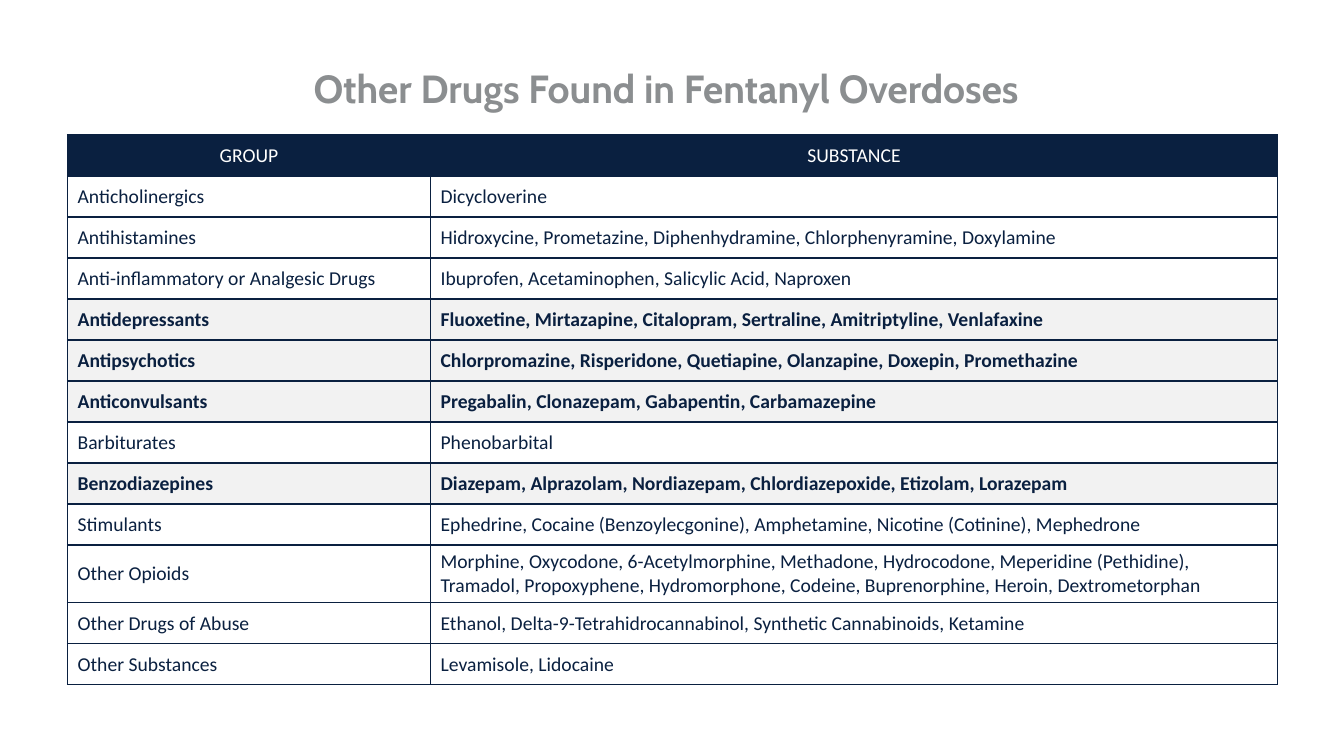
from dataclasses import dataclass

from lxml.etree import SubElement
from pptx import Presentation
from pptx.dml.color import RGBColor
from pptx.enum.text import MSO_ANCHOR as Anchor, PP_ALIGN as Align
from pptx.oxml.ns import qn
from pptx.util import Inches, Pt

# Content
TITLE = "Other Drugs Found in Fentanyl Overdoses"
HEADINGS = ("GROUP", "SUBSTANCE")
DRUGS = [
    ("Anticholinergics", "Dicycloverine"),
    ("Antihistamines", "Hidroxycine, Prometazine, Diphenhydramine, Chlorphenyramine, Doxylamine"),
    ("Anti-inflammatory or Analgesic Drugs", "Ibuprofen, Acetaminophen, Salicylic Acid, Naproxen"),
    ("Antidepressants", "Fluoxetine, Mirtazapine, Citalopram, Sertraline, Amitriptyline, Venlafaxine"),
    ("Antipsychotics", "Chlorpromazine, Risperidone, Quetiapine, Olanzapine, Doxepin, Promethazine"),
    ("Anticonvulsants", "Pregabalin, Clonazepam, Gabapentin, Carbamazepine"),
    ("Barbiturates", "Phenobarbital"),
    ("Benzodiazepines", "Diazepam, Alprazolam, Nordiazepam, Chlordiazepoxide, Etizolam, Lorazepam"),
    ("Stimulants", "Ephedrine, Cocaine (Benzoylecgonine), Amphetamine, Nicotine (Cotinine), Mephedrone"),
    ("Other Opioids", "Morphine, Oxycodone, 6-Acetylmorphine, Methadone, Hydrocodone, "
                      "Meperidine (Pethidine), Tramadol, Propoxyphene, Hydromorphone, Codeine, "
                      "Buprenorphine, Heroin, Dextrometorphan"),
    ("Other Drugs of Abuse", "Ethanol, Delta-9-Tetrahidrocannabinol, Synthetic Cannabinoids, Ketamine"),
    ("Other Substances", "Levamisole, Lidocaine"),
]
HIGHLIGHTED = {"Antidepressants", "Antipsychotics", "Anticonvulsants", "Benzodiazepines"}


@dataclass(frozen=True)
class Theme:
    navy: str = "0A2040"
    gray: str = "8B8E90"
    pale: str = "F2F2F2"
    white: str = "FFFFFF"
    title_font: str = "Cabin"
    body_font: str = "Calibri"
    title_size: int = 28
    body_size: int = 14
    border: int = 1


THEME = Theme()
COLUMN_WIDTHS = (Inches(3.6), Inches(8.4))
TABLE_HEIGHT = Inches(5.29)


def write(frame, text, *, font=THEME.body_font, size=THEME.body_size,
          color=THEME.navy, bold=False, align=Align.LEFT, spacing=1.0):
    para = frame.paragraphs[0]
    para.alignment = align
    para.line_spacing = spacing
    span = para.add_run()
    span.text = text
    span.font.name = font
    span.font.size = Pt(size)
    span.font.bold = bold
    span.font.color.rgb = RGBColor.from_string(color)


def add_borders(cell):
    properties = cell._tc.get_or_add_tcPr()
    for side in ("a:lnL", "a:lnR", "a:lnT", "a:lnB"):
        line = SubElement(properties, qn(side), w=str(Pt(THEME.border)))
        fill = SubElement(line, qn("a:solidFill"))
        SubElement(fill, qn("a:srgbClr"), val=THEME.navy)


def fill_row(table, index, texts, fill, **text_format):
    for column, text in enumerate(texts):
        cell = table.cell(index, column)
        cell.vertical_anchor = Anchor.MIDDLE
        add_borders(cell)
        cell.fill.solid()
        cell.fill.fore_color.rgb = RGBColor.from_string(fill)
        write(cell.text_frame, text, **text_format)


def main():
    deck = Presentation()
    deck.slide_width, deck.slide_height = Inches(13.33), Inches(7.5)
    page = deck.slides.add_slide(deck.slide_layouts[5])

    # Title
    title = page.shapes.title
    title.left, title.top = Inches(0.36), Inches(0.47)
    title.width, title.height = Inches(12.49), Inches(0.87)
    title.text_frame.vertical_anchor = Anchor.MIDDLE
    write(title.text_frame, TITLE, font=THEME.title_font, size=THEME.title_size,
          color=THEME.gray, bold=True, align=Align.CENTER, spacing=0.9)

    # Table grid
    table = page.shapes.add_table(
        len(DRUGS) + 1, len(HEADINGS), Inches(0.67), Inches(1.34),
        sum(COLUMN_WIDTHS), TABLE_HEIGHT).table
    table.horz_banding = False
    for column, width in zip(table.columns, COLUMN_WIDTHS):
        column.width = width

    # Header and drug groups
    fill_row(table, 0, HEADINGS, THEME.navy, color=THEME.white, align=Align.CENTER)
    for index, drug in enumerate(DRUGS, start=1):
        marked = drug[0] in HIGHLIGHTED
        fill_row(table, index, drug, THEME.pale if marked else THEME.white, bold=marked)

    deck.save("out.pptx")


if __name__ == "__main__":
    main()
